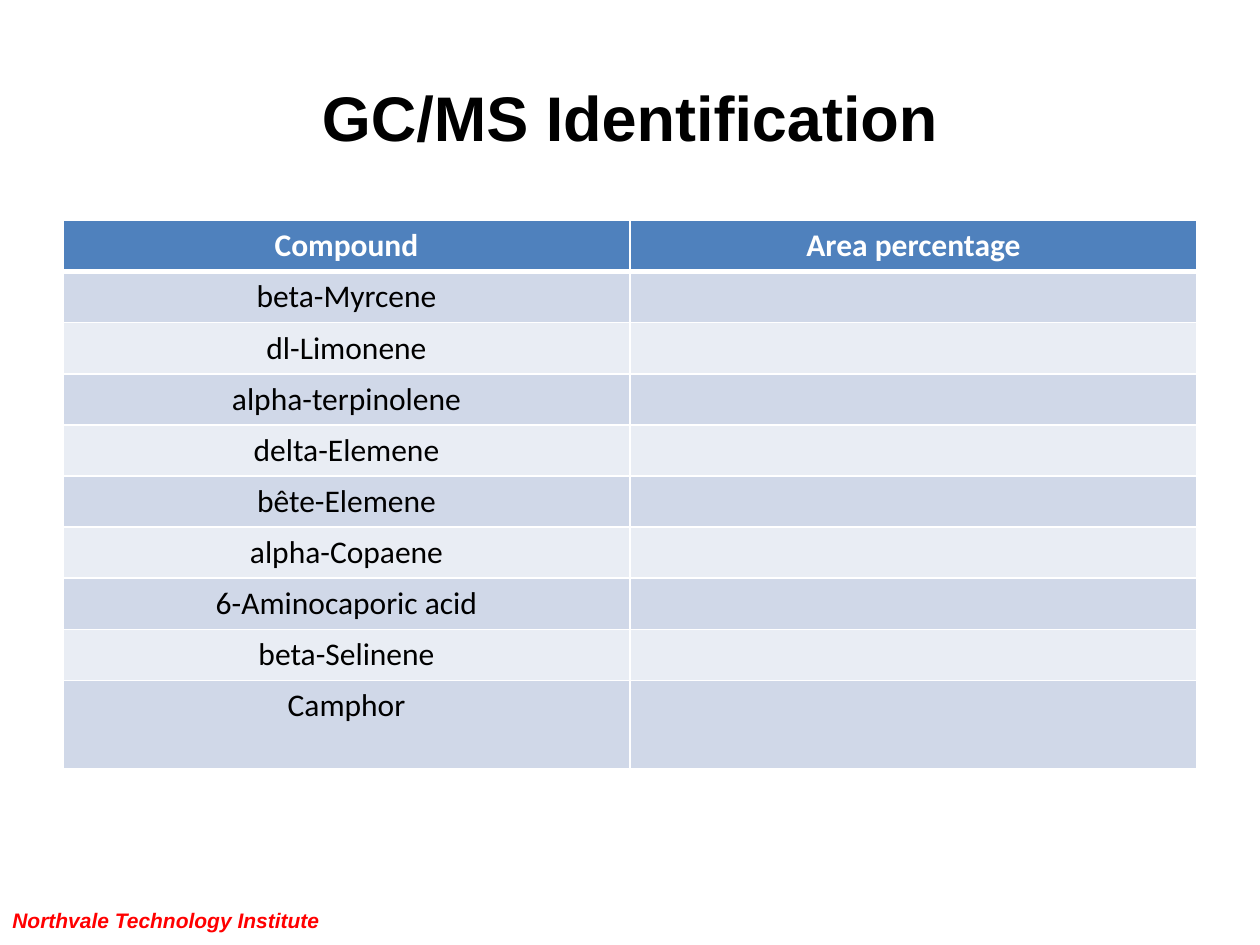
from lxml import etree
from pptx import Presentation
from pptx.dml.color import RGBColor
from pptx.enum.text import MSO_ANCHOR, PP_ALIGN
from pptx.oxml.ns import qn
from pptx.util import Inches, Pt

CENTER, LEFT = PP_ALIGN.CENTER, PP_ALIGN.LEFT
MIDDLE = MSO_ANCHOR.MIDDLE
TITLE_ONLY = 5

COMPOUNDS = [
    "beta-Myrcene", "dl-Limonene", "alpha-terpinolene", "delta-Elemene",
    "bête-Elemene", "alpha-Copaene", "6-Aminocaporic acid", "beta-Selinene",
    "Camphor",
]


def color(value):
    return RGBColor.from_string(value)


class SlideBuilder:
    """Holds the style and the current slide; lengths are on a grid of 20 by 15."""

    COLUMNS, ROWS = 20, 15
    HEADING_FONT, BODY_FONT = "Arial", "Calibri"
    BLACK, WHITE, RED = "000000", "FFFFFF", "FF0000"
    HEADER_FILL, BANDS = "4F81BD", ("D0D8E8", "E9EDF4")

    def __init__(self, deck):
        self.column = deck.slide_width / self.COLUMNS
        self.row = deck.slide_height / self.ROWS
        self.slide = deck.slides.add_slide(deck.slide_layouts[TITLE_ONLY])

    def area(self, left, top, width, height):
        return (round(left * self.column), round(top * self.row),
                round(width * self.column), round(height * self.row))

    def set_text(self, frame, text, font, size, ink, align, bold=False, italic=False):
        para = frame.paragraphs[0]
        para.text = text
        para.alignment = align
        para.font.name, para.font.size = font, Pt(size)
        para.font.bold, para.font.italic = bold, italic
        para.font.color.rgb = color(ink)

    def title(self, text, *place):
        box = self.slide.shapes.title
        box.left, box.top, box.width, box.height = self.area(*place)
        box.text_frame.vertical_anchor = MIDDLE
        self.set_text(box.text_frame, text, self.HEADING_FONT, 36, self.BLACK, CENTER,
                      bold=True)

    def footer(self, text, *place):
        box = self.slide.shapes.add_textbox(*self.area(*place))
        box.text_frame.word_wrap = False
        box.text_frame.vertical_anchor = MIDDLE
        self.set_text(box.text_frame, text, self.HEADING_FONT, 12, self.RED, LEFT,
                      bold=True, italic=True)

    def borders(self, cell, bottom_width, top_width):
        """Add the four lines, which must stand before the fill in the cell properties."""
        properties = cell._tc.get_or_add_tcPr()
        widths = {"a:lnL": 1, "a:lnR": 1, "a:lnT": top_width, "a:lnB": bottom_width}
        for index, (tag, width) in enumerate(widths.items()):
            line = etree.Element(qn(tag), w=str(int(Pt(width))))
            fill = etree.SubElement(line, qn("a:solidFill"))
            etree.SubElement(fill, qn("a:srgbClr"), val=self.WHITE)
            properties.insert(index, line)

    def table(self, records, last_height, *place):
        """Fill a table whose last row has its own height; the others share the rest."""
        left, top, width, height = self.area(*place)
        count = len(records)
        table = self.slide.shapes.add_table(
            count, len(records[0]), left, top, width, height).table
        last = round(last_height * self.row)
        for index, record in enumerate(records):
            is_header = index == 0
            table.rows[index].height = (
                last if index == count - 1 else round((height - last) / (count - 1)))
            for cell, text in zip(table.rows[index].cells, record):
                cell.fill.solid()
                cell.fill.fore_color.rgb = color(
                    self.HEADER_FILL if is_header else self.BANDS[(index - 1) % 2])
                self.borders(cell, 3 if is_header else 1, 3 if index == 1 else 1)
                self.set_text(cell.text_frame, text, self.BODY_FONT, 18,
                              self.WHITE if is_header else self.BLACK, CENTER,
                              bold=is_header)


def main():
    deck = Presentation()
    deck.slide_width, deck.slide_height = Inches(10), Inches(7.5)
    builder = SlideBuilder(deck)
    builder.title("GC/MS Identification", 1, 0.6, 18, 2.5)
    records = [("Compound", "Area percentage")] + [(name, "") for name in COMPOUNDS]
    builder.table(records, 1.4, 1, 3.5, 18, 8.7)
    builder.footer("Northvale Technology Institute", 0, 14.2, 5.34, 0.8)
    deck.save("out.pptx")


if __name__ == "__main__":
    main()
